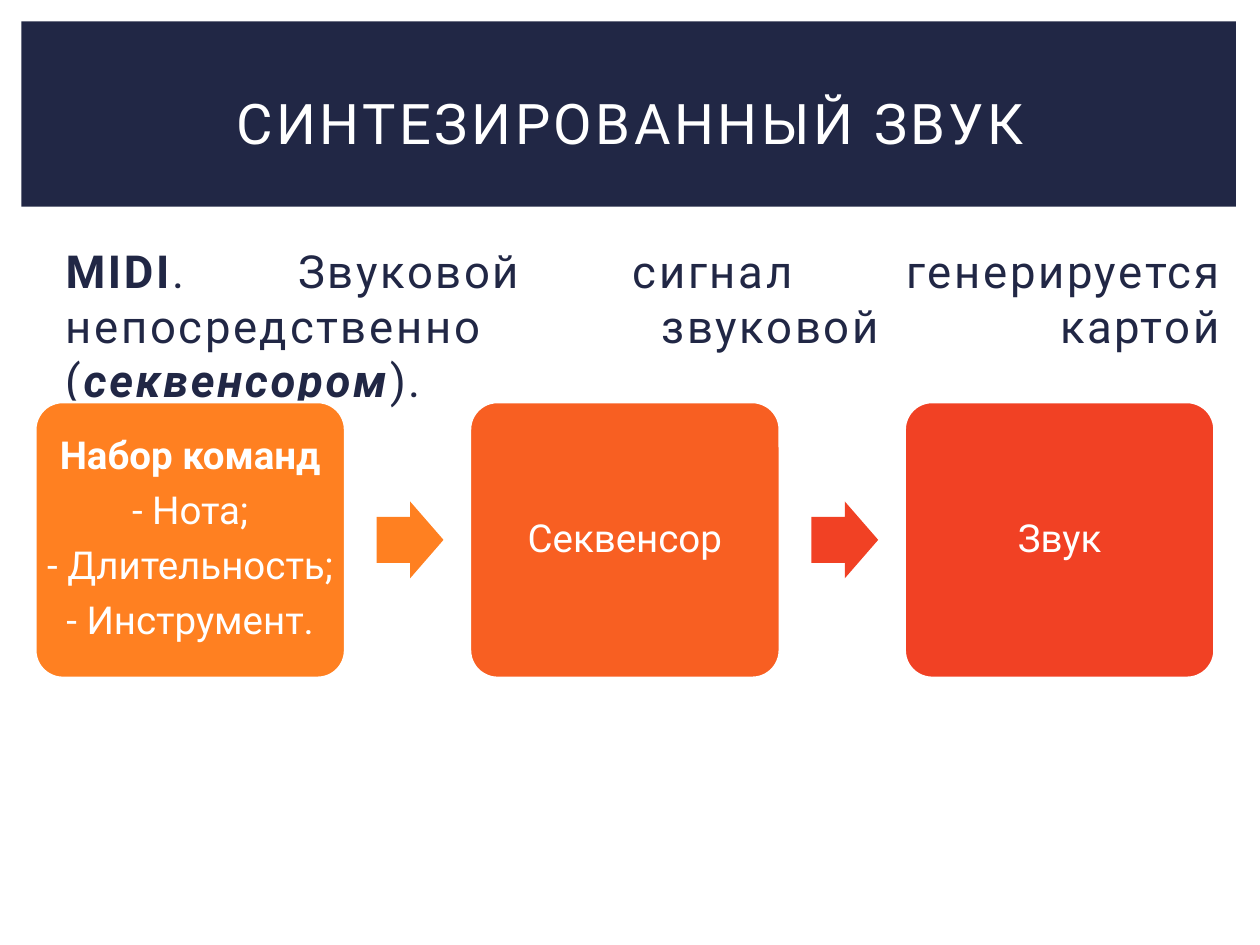
from pptx import Presentation
from pptx.dml.color import RGBColor
from pptx.enum.shapes import MSO_SHAPE
from pptx.enum.text import MSO_ANCHOR, MSO_AUTO_SIZE, PP_ALIGN
from pptx.oxml.ns import qn
from pptx.util import Inches, Pt

COLORS = {"navy": "212745", "white": "FFFFFF", "amber": "FF8021",
          "orange": "F85F22", "red": "F14124"}
FONT = "Roboto"
STEPS = [
    (["Набор команд", "- Нота;", "- Длительность;", "- Инструмент."], "amber"),
    (["Секвенсор"], "orange"),
    (["Звук"], "red"),
]
ARROW_COLORS = ["amber", "red"]


def color(name):
    return RGBColor.from_string(COLORS[name])


def format_span(span, size, color_name, bold=False, italic=False, spacing=0):
    font = span.font
    font.name, font.size = FONT, Pt(size)
    font.bold, font.italic = bold, italic
    font.color.rgb = color(color_name)
    if spacing:
        span._r.get_or_add_rPr().set("spc", str(int(spacing * 100)))


def place(shape, left, top, width, height):
    shape.left, shape.top = Inches(left), Inches(top)
    shape.width, shape.height = Inches(width), Inches(height)


def add_filled(page, kind, box, fill):
    shape = page.shapes.add_shape(kind, *[Inches(length) for length in box])
    shape.shadow.inherit = False
    shape.fill.solid()
    shape.fill.fore_color.rgb = color(fill)
    shape.line.fill.background()
    return shape


def add_heading(page, left, top, width, height):
    band = add_filled(page, MSO_SHAPE.RECTANGLE, (left, top, width, height), "navy")
    title = page.shapes.title
    title._element.addprevious(band._element)
    place(title, left + 0.25, top + 0.22, width - 0.47, height - 0.32)
    frame = title.text_frame
    frame.text = "СИНТЕЗИРОВАННЫЙ ЗВУК"
    frame.auto_size = MSO_AUTO_SIZE.NONE
    frame.vertical_anchor = MSO_ANCHOR.MIDDLE
    para = frame.paragraphs[0]
    para.alignment = PP_ALIGN.CENTER
    format_span(para.runs[0], 32, "white", spacing=2)


def add_description(page, left, top, width, height):
    body = page.placeholders[1]
    place(body, left, top, width, height)
    frame = body.text_frame
    frame.auto_size = MSO_AUTO_SIZE.NONE
    para = frame.paragraphs[0]
    para.alignment = PP_ALIGN.JUSTIFY
    para.space_before = Pt(0)
    properties = para._p.get_or_add_pPr()
    properties.set("marL", "0")
    properties.set("indent", "0")
    properties.append(properties.makeelement(qn("a:buNone"), {}))
    parts = [
        ("MIDI", True, False),
        (". Звуковой сигнал генерируется непосредственно звуковой картой (", False, False),
        ("секвенсором", True, True),
        (").", False, False),
    ]
    for text, bold, italic in parts:
        span = para.add_run()
        span.text = text
        format_span(span, 26, "navy", bold, italic, spacing=1.5)


def add_step(page, box, lines, fill):
    card = add_filled(page, MSO_SHAPE.ROUNDED_RECTANGLE, box, fill)
    card.adjustments[0] = 0.1
    card.line.color.rgb = color("white")
    card.line.width = Pt(1.5)
    frame = card.text_frame
    frame.word_wrap = True
    frame.vertical_anchor = MSO_ANCHOR.MIDDLE
    frame.margin_left = frame.margin_right = Inches(0.02)
    frame.text = "\n".join(lines)
    for index, para in enumerate(frame.paragraphs):
        para.alignment = PP_ALIGN.CENTER
        para.line_spacing = 0.9
        para.space_after = Pt(7.7)
        is_heading = index == 0 and len(lines) > 1
        format_span(para.runs[0], 22, "white", bold=is_heading)


def add_process(page, left, top, width, height):
    card_width, arrow_width, arrow_height = 2.46, 0.53, 0.61
    pitch = (width - card_width) / (len(STEPS) - 1)
    for index, (lines, fill) in enumerate(STEPS):
        add_step(page, (left + index * pitch, top, card_width, height), lines, fill)
    # Arrows in the gaps between the cards
    for index, fill in enumerate(ARROW_COLORS):
        arrow_left = left + index * pitch + card_width + 0.25
        arrow_top = top + (height - arrow_height) / 2
        arrow = add_filled(page, MSO_SHAPE.RIGHT_ARROW,
                           (arrow_left, arrow_top, arrow_width, arrow_height), fill)
        arrow.adjustments[0] = 0.6
        arrow.adjustments[1] = 0.5


def main():
    deck = Presentation()
    deck.slide_width, deck.slide_height = Inches(10), Inches(7.5)
    page = deck.slides.add_slide(deck.slide_layouts[1])
    add_heading(page, 0.17, 0.17, 9.64, 1.47)
    add_description(page, 0.42, 1.88, 9.39, 4.82)
    add_process(page, 0.28, 3.19, 9.36, 2.19)
    deck.save("out.pptx")


if __name__ == "__main__":
    main()
